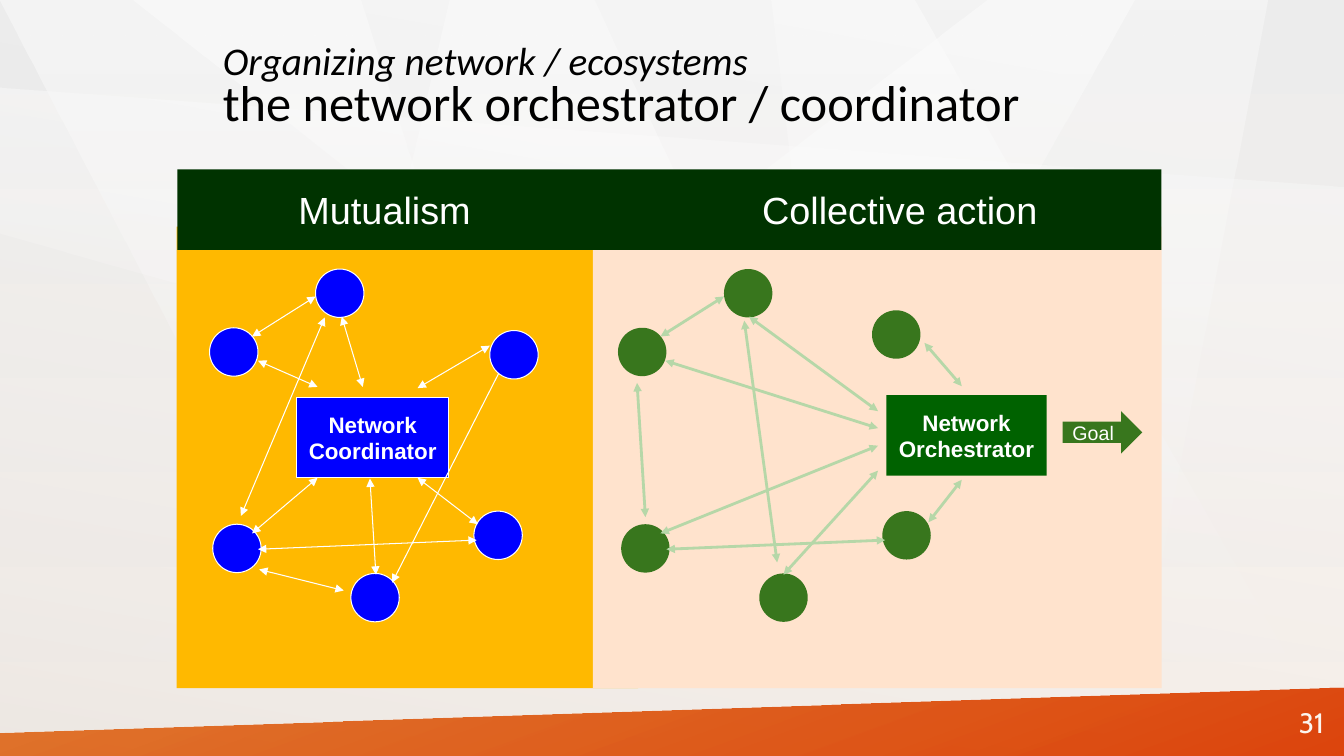
from lxml import etree
from pptx import Presentation
from pptx import util as u
from pptx.dml.color import RGBColor
from pptx.enum import shapes, text
from pptx.oxml.ns import qn

FACETS = [
    ([(9.79, 0), (0, 7.5), (7.01, 7.5), (11.25, 0)], 50),
    ([(0, 0), (3.58, 0), (5.94, 7.5), (3.91, 7.5)], 50),
    ([(1.32, 0), (9.07, 0), (13.33, 7.5), (10.83, 7.5)], 50),
    ([(7.65, 0), (8.56, 7.5), (11.15, 7.5), (12.57, 0)], 40),
    ([(5.89, 0), (4.46, 0), (2.72, 7.5), (9.39, 7.5)], 50),
    ([(0, 0.87), (13.33, 1.86), (13.33, 6.1), (0, 2.32)], 40),
]
FOOTER_BAND = [(0, 7.27), (13.33, 6.82), (13.33, 7.5), (0, 7.5)]
NODE_SIZE = 0.48
COLLECTIVE_SHIFT = 4.05
SHARED_NODES = [(3.13, 2.67), (2.08, 3.25), (2.11, 5.2), (4.7, 5.07), (3.48, 5.69)]
SHARED_LINKS = [(2.5, 3.34, 3.13, 2.94), (2.56, 5.45, 4.73, 5.36)]
MUTUAL_LINKS = [
    (4.14, 3.85, 4.86, 3.43), (3.15, 3.84, 2.56, 3.58), (3.39, 3.14, 3.6, 3.84),
    (3.15, 4.74, 2.5, 5.29), (3.67, 4.75, 3.73, 5.7), (4.14, 4.74, 4.74, 5.2),
    (3.89, 5.78, 5, 3.6), (2.57, 5.65, 3.41, 5.86), (2.39, 5.12, 3.22, 3.15),
]
COLLECTIVE_LINKS = [
    (9.54, 3.83, 9.17, 3.4), (8.71, 4.25, 6.6, 3.58), (7.43, 3.14, 8.71, 4.08),
    (8.71, 4.42, 6.55, 5.29), (8.71, 4.67, 7.77, 5.7), (9.54, 4.76, 9.21, 5.18),
    (6.4, 5.13, 6.32, 3.8), (7.71, 5.58, 7.38, 3.18),
]


def cm(inches):
    """Return a length measured in inches as centimetres."""
    return u.Cm(round(inches * 2.54, 2))


def rgb(code):
    """Return the colour for a hex string."""
    return RGBColor.from_string(code)


def paint_gradient(fill, owner, stops, angle):
    """Fill with a two-stop gradient of (colour, opacity) at a clockwise angle."""
    fill.gradient()
    fill.gradient_angle = (360 - angle) % 360
    for stop, (code, _) in zip(fill.gradient_stops, stops):
        stop.color.rgb = rgb(code)
    for colour, (_, opacity) in zip(owner.iter(qn("a:srgbClr")), stops):
        etree.SubElement(colour, qn("a:alpha"), val=str(opacity * 1000))


def add_facet(slide, points, stops, angle):
    """Add a translucent polygon of the backdrop."""
    corners = [(cm(x), cm(y)) for x, y in points]
    builder = slide.shapes.build_freeform(*corners[0])
    builder.add_line_segments(corners[1:], close=True)
    facet = builder.convert_to_shape()
    facet.shadow.inherit = False
    facet.line.fill.background()
    paint_gradient(facet.fill, facet.element.spPr, stops, angle)


def add_block(slide, kind, box, colour=None, outline=None):
    """Add a flat preset shape."""
    block = slide.shapes.add_shape(kind, *map(cm, box))
    block.shadow.inherit = False
    if colour:
        block.fill.solid()
        block.fill.fore_color.rgb = rgb(colour)
    if outline:
        block.line.color.rgb = rgb(outline)
        block.line.width = u.Pt(0.75)
    else:
        block.line.fill.background()
    return block


def add_run(paragraph, words, size, font, colour, bold=False, italic=False):
    """Append one formatted run."""
    run = paragraph.add_run()
    run.text = words
    run.font.size = u.Pt(size)
    run.font.name = font
    run.font.color.rgb = rgb(colour)
    run.font.bold = bold
    run.font.italic = italic


def write_label(block, words, size, align, font="Arial", colour="FFFFFF", bold=False):
    """Write a single vertically centred label in a shape."""
    frame = block.text_frame
    frame.word_wrap = True
    frame.vertical_anchor = text.MSO_ANCHOR.MIDDLE
    paragraph = frame.paragraphs[0]
    paragraph.alignment = align
    add_run(paragraph, words, size, font, colour, bold)
    return paragraph


def add_node(slide, x, y, colour, outline=None):
    """Add one round network member."""
    add_block(slide, shapes.MSO_SHAPE.OVAL, (x, y, NODE_SIZE, NODE_SIZE), colour, outline)


def add_link(slide, ends, colour, width):
    """Add a double-headed arrow."""
    link = slide.shapes.add_connector(shapes.MSO_CONNECTOR.STRAIGHT, *map(cm, ends))
    link.line.color.rgb = rgb(colour)
    link.line.width = u.Pt(width)
    properties = link.element.spPr
    stroke = properties.find(qn("a:ln"))
    for end in ("a:headEnd", "a:tailEnd"):
        etree.SubElement(stroke, qn(end), type="triangle")
    etree.SubElement(properties, qn("a:effectLst"))


def add_network(slide, panel, panel_colour, hub, hub_name, hub_colour, nodes,
                node_colour, links, link_colour, link_width, outline=None):
    """Add a panel with its hub, members and links."""
    add_block(slide, shapes.MSO_SHAPE.RECTANGLE, panel, panel_colour)
    hub_box = add_block(slide, shapes.MSO_SHAPE.RECTANGLE, hub, hub_colour, outline)
    write_label(hub_box, hub_name, 16, text.PP_ALIGN.CENTER, bold=True)
    for x, y in nodes:
        add_node(slide, x, y, node_colour, outline)
    for ends in links:
        add_link(slide, ends, link_colour, link_width)


def add_backdrop(slide):
    """Paint the background, facets and footer band."""
    background = slide.background.fill
    background.gradient()
    paint_gradient(background, slide.element.find(".//" + qn("p:bg")),
                   [("ECECEC", 100), ("FCF5EF", 100)], 90)
    for points, opacity in FACETS:
        add_facet(slide, points, [("FFFFFF", opacity), ("FFFFFF", 0)], 90)
    veil = add_block(slide, shapes.MSO_SHAPE.RECTANGLE, (0, 0, 13.33, 7.5))
    paint_gradient(veil.fill, veil.element.spPr, [("BFBFBF", 25), ("FFFFFF", 0)], 280)
    add_facet(slide, FOOTER_BAND, [("DD5900", 80), ("DC3C00", 95)], 70)


def add_header(slide):
    """Add the dark band naming both panels."""
    band = add_block(slide, shapes.MSO_SHAPE.RECTANGLE, (1.76, 1.68, 9.76, 0.8), "003300")
    band.text_frame.margin_left = cm(1.2)
    heading = write_label(band, "Mutualism\tCollective action", 27, text.PP_ALIGN.LEFT)
    stops = etree.SubElement(heading._p.get_or_add_pPr(), qn("a:tabLst"))
    etree.SubElement(stops, qn("a:tab"), pos=str(cm(4.6)), algn="l")


def write_title(slide):
    """Format the title and bring it in front of the backdrop."""
    title = slide.shapes.title
    title.left, title.top, title.width, title.height = map(cm, (2.11, 0.25, 9.24, 1.25))
    frame = title.text_frame
    frame.auto_size = text.MSO_AUTO_SIZE.NONE
    frame.vertical_anchor = text.MSO_ANCHOR.MIDDLE
    paragraph = frame.paragraphs[0]
    paragraph.alignment = text.PP_ALIGN.LEFT
    paragraph.line_spacing = 0.8
    add_run(paragraph, "Organizing network / ecosystems", 28, "Calibri", "000000", italic=True)
    paragraph.add_line_break()
    add_run(paragraph, "the network orchestrator / coordinator", 36, "Calibri", "000000")
    title.element.getparent().append(title.element)


def main():
    """Build and save the slide."""
    deck = Presentation()
    deck.slide_width, deck.slide_height = cm(13.33), cm(7.5)
    slide = deck.slides.add_slide(deck.slide_layouts[5])
    add_backdrop(slide)
    add_network(slide, (1.75, 2.25, 4.58, 4.58), "FFB900", (2.94, 3.94, 1.51, 0.8),
                "Network Coordinator", "0000FF", SHARED_NODES, "0000FF",
                SHARED_LINKS + MUTUAL_LINKS, "FFFFFF", 0.75, "FFFFFF")
    add_node(slide, 4.86, 3.28, "0000FF", "FFFFFF")
    shifted_nodes = [(x + COLLECTIVE_SHIFT, y) for x, y in SHARED_NODES]
    shifted_links = [(x1 + COLLECTIVE_SHIFT, y1, x2 + COLLECTIVE_SHIFT, y2)
                     for x1, y1, x2, y2 in SHARED_LINKS]
    add_network(slide, (5.88, 2.25, 5.64, 4.58), "FFE3CD", (8.79, 3.92, 1.59, 0.8),
                "Network Orchestrator", "006200", shifted_nodes + [(8.65, 3.08)], "38761D",
                shifted_links + COLLECTIVE_LINKS, "B6D7A8", 2)
    goal = add_block(slide, shapes.MSO_SHAPE.RIGHT_ARROW, (10.54, 4.08, 0.79, 0.42), "38761D")
    write_label(goal, "Goal", 14, text.PP_ALIGN.LEFT)
    add_header(slide)
    write_title(slide)
    page_number = slide.shapes.add_textbox(*map(cm, (12.16, 6.97, 1.07, 0.4)))
    write_label(page_number, "31", 20, text.PP_ALIGN.RIGHT, "Cabin", "FCF5EF")
    deck.save("out.pptx")


if __name__ == "__main__":
    main()
